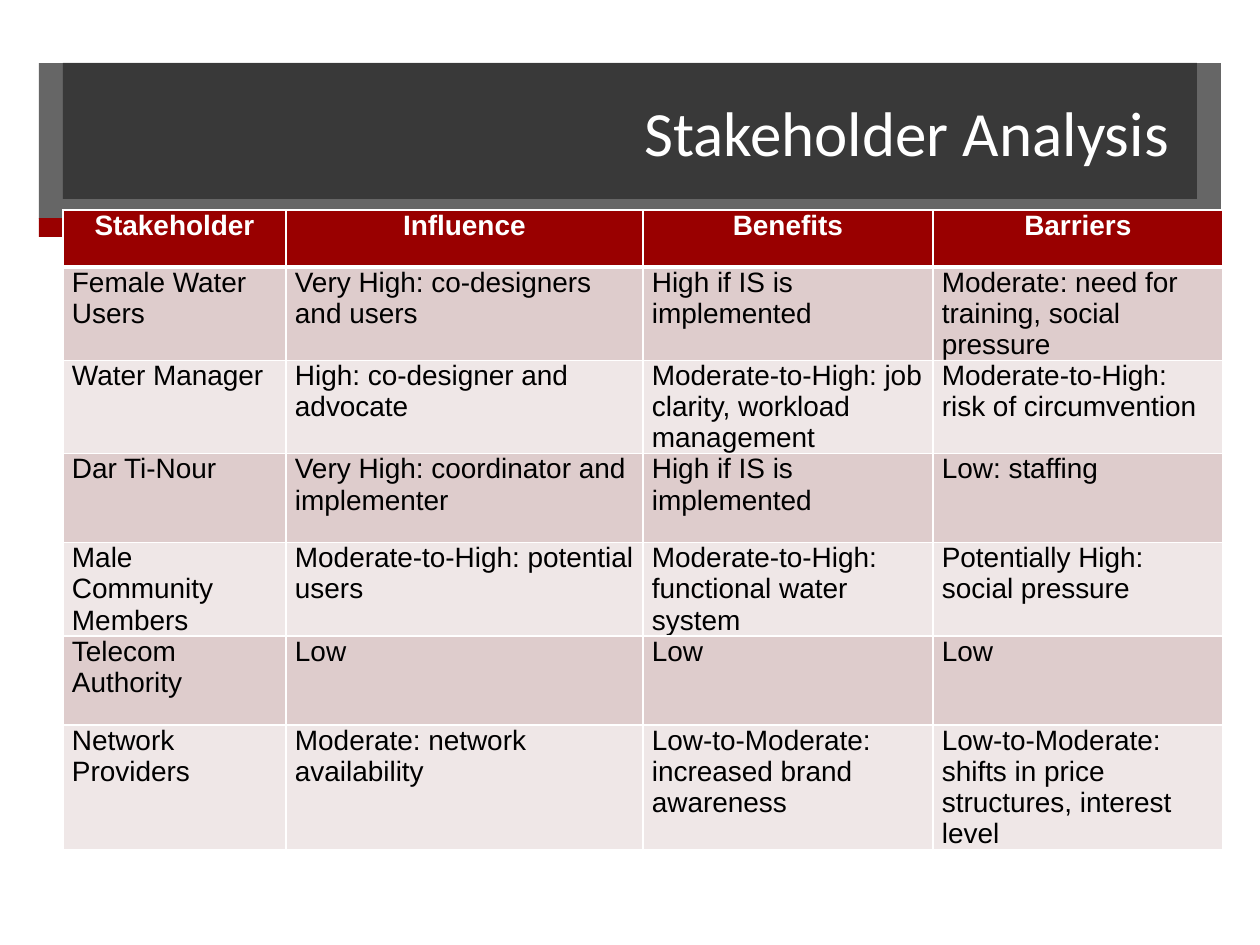
from pptx import Presentation, util as u
from pptx.dml.color import RGBColor
from pptx.enum import shapes, text
from pptx.oxml import parse_xml
from pptx.oxml.ns import nsdecls, qn

PX = 914400 // 126
WHITE, DARK, RED = "FFFFFF", "262626", "990000"
BANDS = ["DECCCC", "EFE7E7"]


def color(code):
    return RGBColor.from_string(code)


def write(frame, words, font="Arial", size=16, ink="000000", bold=False, align="LEFT"):
    frame.word_wrap = True
    para = frame.paragraphs[0]
    para.alignment = getattr(text.PP_ALIGN, align)
    run = para.add_run()
    run.text = words
    run.font.name = font
    run.font.size = u.Pt(size)
    run.font.bold = bold
    run.font.color.rgb = color(ink)


deck = Presentation()
deck.slide_width, deck.slide_height = 1260 * PX, 945 * PX
slide = deck.slides.add_slide(deck.slide_layouts[6])

bars = [
    (39, 63, 1182, 156, DARK, 70),
    (39, 218, 220, 19, RED, 100),
    (63, 63, 1134, 136, DARK, 70),
]
for left, top, width, height, fill, alpha in bars:
    bar = slide.shapes.add_shape(
        shapes.MSO_SHAPE.RECTANGLE, left * PX, top * PX, width * PX, height * PX)
    bar.shadow.inherit = False
    bar.line.fill.background()
    bar.fill.solid()
    bar.fill.fore_color.rgb = color(fill)
    if alpha < 100:
        tone = bar.fill._xPr.find(qn("a:solidFill"))[0]
        tone.append(parse_xml(f'<a:alpha {nsdecls("a")} val="{alpha * 1000}"/>'))

title = bar.text_frame
title.margin_right = 28 * PX
title.vertical_anchor = text.MSO_ANCHOR.MIDDLE
write(title, "Stakeholder Analysis", font="Calibri", size=36, ink=WHITE, align="RIGHT")

rows = [
    ["Stakeholder", "Influence", "Benefits", "Barriers"],
    ["Female Water Users", "Very High: co-designers and users",
     "High if IS is implemented", "Moderate: need for training, social pressure"],
    ["Water Manager", "High: co-designer and advocate",
     "Moderate-to-High: job clarity, workload management",
     "Moderate-to-High: risk of circumvention"],
    ["Dar Ti-Nour", "Very High: coordinator and implementer",
     "High if IS is implemented", "Low: staffing"],
    ["Male Community Members", "Moderate-to-High: potential users",
     "Moderate-to-High: functional water system", "Potentially High: social pressure"],
    ["Telecom Authority", "Low", "Low", "Low"],
    ["Network Providers", "Moderate: network availability",
     "Low-to-Moderate: increased brand awareness",
     "Low-to-Moderate: shifts in price structures, interest level"],
]
widths = [223, 357, 290, 290]
heights = [57] + [89] * 6

grid = slide.shapes.add_table(
    len(rows), len(widths), 63 * PX, 210 * PX, sum(widths) * PX, sum(heights) * PX).table
for col, width in zip(grid.columns, widths):
    col.width = width * PX
for r, (row, height) in enumerate(zip(rows, heights)):
    grid.rows[r].height = height * PX
    head = r == 0
    for c, words in enumerate(row):
        cell = grid.cell(r, c)
        cell.margin_left = cell.margin_right = 9 * PX
        cell.margin_top = cell.margin_bottom = 0
        write(cell.text_frame, words, ink=WHITE if head else "000000",
              bold=head, align="CENTER" if head else "LEFT")
        props = cell._tc.get_or_add_tcPr()
        for side in "LRTB":
            thick = 3 if (r, side) in [(0, "B"), (1, "T")] else 1
            props.append(parse_xml(
                f'<a:ln{side} {nsdecls("a")} w="{u.Pt(thick)}"><a:solidFill>'
                f'<a:srgbClr val="{WHITE}"/></a:solidFill></a:ln{side}>'))
        cell.fill.solid()
        cell.fill.fore_color.rgb = color(RED if head else BANDS[(r - 1) % 2])

deck.save("out.pptx")
